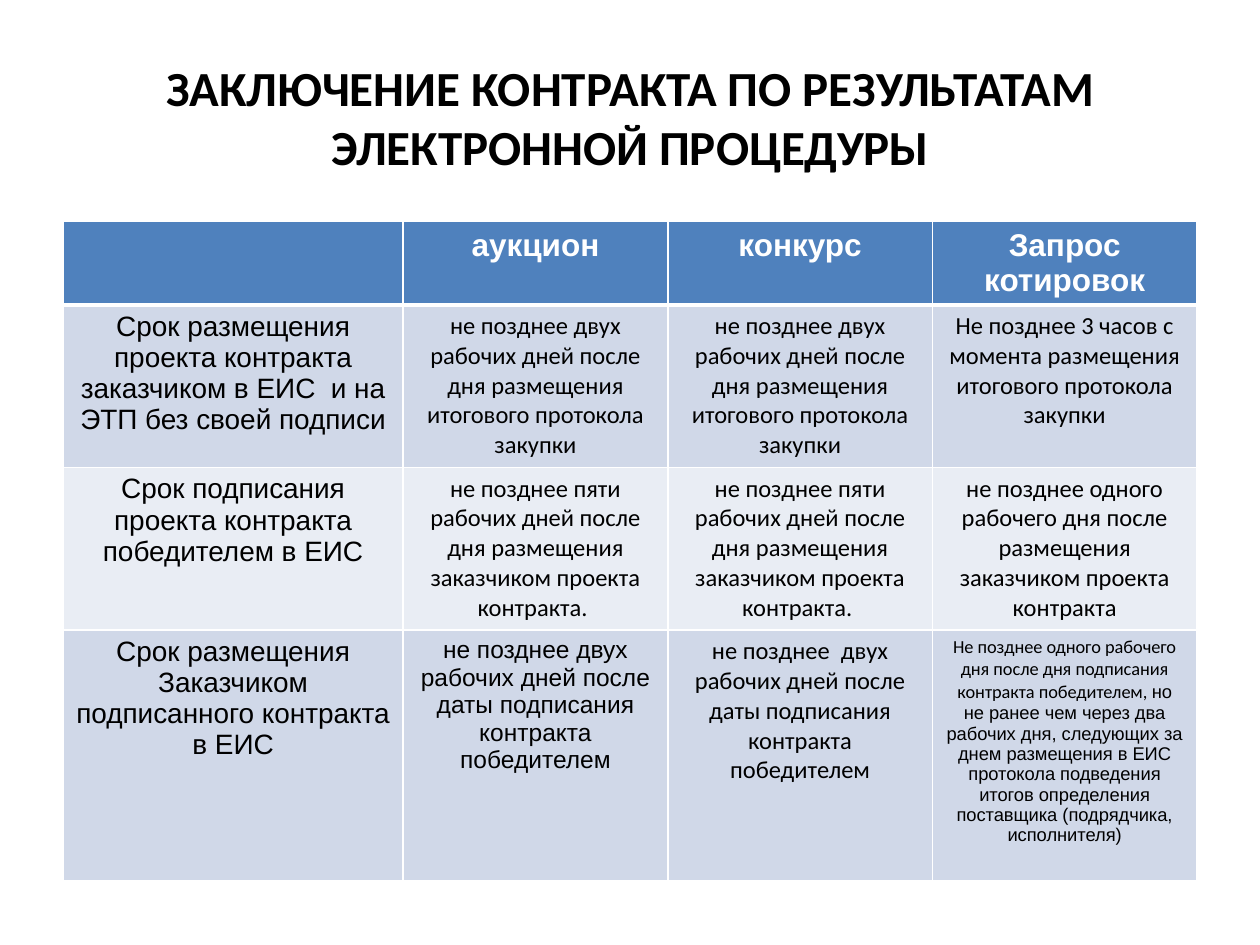
import pptx
import pptx.dml.color
import pptx.enum.text
import pptx.oxml
import pptx.oxml.ns
import pptx.util

COLORS = {
    "ink": "000000",
    "paper": "FFFFFF",
    "header": "4F81BD",
    "odd": "D0D8E8",
    "even": "E9EDF4",
}
HEADING, BODY = "Calibri", "Arial"
HEADERS = ["", "аукцион", "конкурс", "Запрос котировок"]
PLACEMENT = "не позднее двух рабочих дней после дня размещения итогового протокола закупки"
SIGNING = "не позднее пяти рабочих дней после дня размещения заказчиком проекта контракта. "
STAGES = [
    "Срок размещения проекта контракта заказчиком в ЕИС  и на ЭТП без своей подписи",
    "Срок подписания проекта контракта победителем в ЕИС",
    "Срок размещения Заказчиком подписанного контракта в ЕИС",
]
DEADLINES = [
    [
        [(PLACEMENT, 14, HEADING)],
        [(PLACEMENT, 14, HEADING)],
        [("Не позднее 3 часов с момента размещения итогового протокола закупки", 14, HEADING)],
    ],
    [
        [(SIGNING, 14, HEADING)],
        [(SIGNING, 14, HEADING)],
        [("не позднее одного рабочего дня после размещения заказчиком проекта контракта", 14, HEADING)],
    ],
    [
        [("не позднее двух рабочих дней после даты подписания контракта победителем", 14, BODY)],
        [("не позднее  двух рабочих дней после даты подписания контракта победителем", 14, HEADING)],
        [
            ("Не позднее одного рабочего дня после дня подписания контракта победителем, ", 10.5, HEADING),
            ("но не ранее чем через два рабочих дня, следующих за днем размещения в ЕИС "
             "протокола подведения итогов определения поставщика (подрядчика, исполнителя)", 10.5, BODY),
        ],
    ],
]


class SlideBuilder:
    def __init__(self, presentation):
        self.width = presentation.slide_width
        self.height = presentation.slide_height
        self.slide = presentation.slides.add_slide(presentation.slide_layouts[5])

    def box(self, left, top, width, height):
        return (round(left * self.width), round(top * self.height),
                round(width * self.width), round(height * self.height))

    def add_text(self, text_frame, runs, color, bold=False):
        paragraph = text_frame.paragraphs[0]
        paragraph.alignment = pptx.enum.text.PP_ALIGN.CENTER
        for text, size, font_name in runs:
            run = paragraph.add_run()
            run.text = text
            run.font.size = pptx.util.Pt(size)
            run.font.name = font_name
            run.font.bold = bold
            run.font.color.rgb = pptx.dml.color.RGBColor.from_string(COLORS[color])

    def title(self, text, box):
        shape = self.slide.shapes.title
        shape.left, shape.top, shape.width, shape.height = self.box(*box)
        shape.text_frame.vertical_anchor = pptx.enum.text.MSO_ANCHOR.MIDDLE
        self.add_text(shape.text_frame, [(text, 28, HEADING)], "ink", bold=True)

    def borders(self, cell, widths):
        properties = cell._tc.get_or_add_tcPr()
        for index, (side, width) in enumerate(widths.items()):
            line = pptx.oxml.parse_xml(
                f'<a:ln{side} {pptx.oxml.ns.nsdecls("a")} w="{pptx.util.Pt(width)}">'
                f'<a:solidFill><a:srgbClr val="{COLORS["paper"]}"/></a:solidFill></a:ln{side}>')
            properties.insert(index, line)

    def table(self, rows, box, column_shares, row_shares):
        left, top, width, height = self.box(*box)
        table = self.slide.shapes.add_table(
            len(rows), len(column_shares), left, top, width, height).table
        for column, share in zip(table.columns, column_shares):
            column.width = round(width * share)
        for row, share in zip(table.rows, row_shares):
            row.height = round(height * share)
        for row_index, row in enumerate(rows):
            header = row_index == 0
            fill = "header" if header else ("odd" if row_index % 2 else "even")
            for column_index, runs in enumerate(row):
                cell = table.cell(row_index, column_index)
                cell.fill.solid()
                cell.fill.fore_color.rgb = pptx.dml.color.RGBColor.from_string(COLORS[fill])
                self.borders(cell, {"L": 1, "R": 1, "T": 3 if row_index == 1 else 1,
                                    "B": 3 if header else 1})
                self.add_text(cell.text_frame, runs, "paper" if header else "ink", header)


def main():
    presentation = pptx.Presentation()
    presentation.slide_width = pptx.util.Inches(10)
    presentation.slide_height = pptx.util.Inches(7.5)
    builder = SlideBuilder(presentation)
    builder.title("ЗАКЛЮЧЕНИЕ КОНТРАКТА ПО РЕЗУЛЬТАТАМ ЭЛЕКТРОННОЙ ПРОЦЕДУРЫ",
                  (0.05, 0.04, 0.9, 1 / 6))
    rows = [[[(text, 18, BODY)] if text else [] for text in HEADERS]]
    rows += [[[(stage, 16, BODY)], *deadlines]
             for stage, deadlines in zip(STAGES, DEADLINES)]
    stage_share = 0.3
    deadline_share = (1 - stage_share) / 3
    row_heights = [0.65, 1.29, 1.29, 1.99]
    total = sum(row_heights)
    builder.table(rows, (0.05, 1.76 / 7.5, 0.9, total / 7.5),
                  [stage_share] + [deadline_share] * 3,
                  [height / total for height in row_heights])
    presentation.save("out.pptx")


if __name__ == "__main__":
    main()
